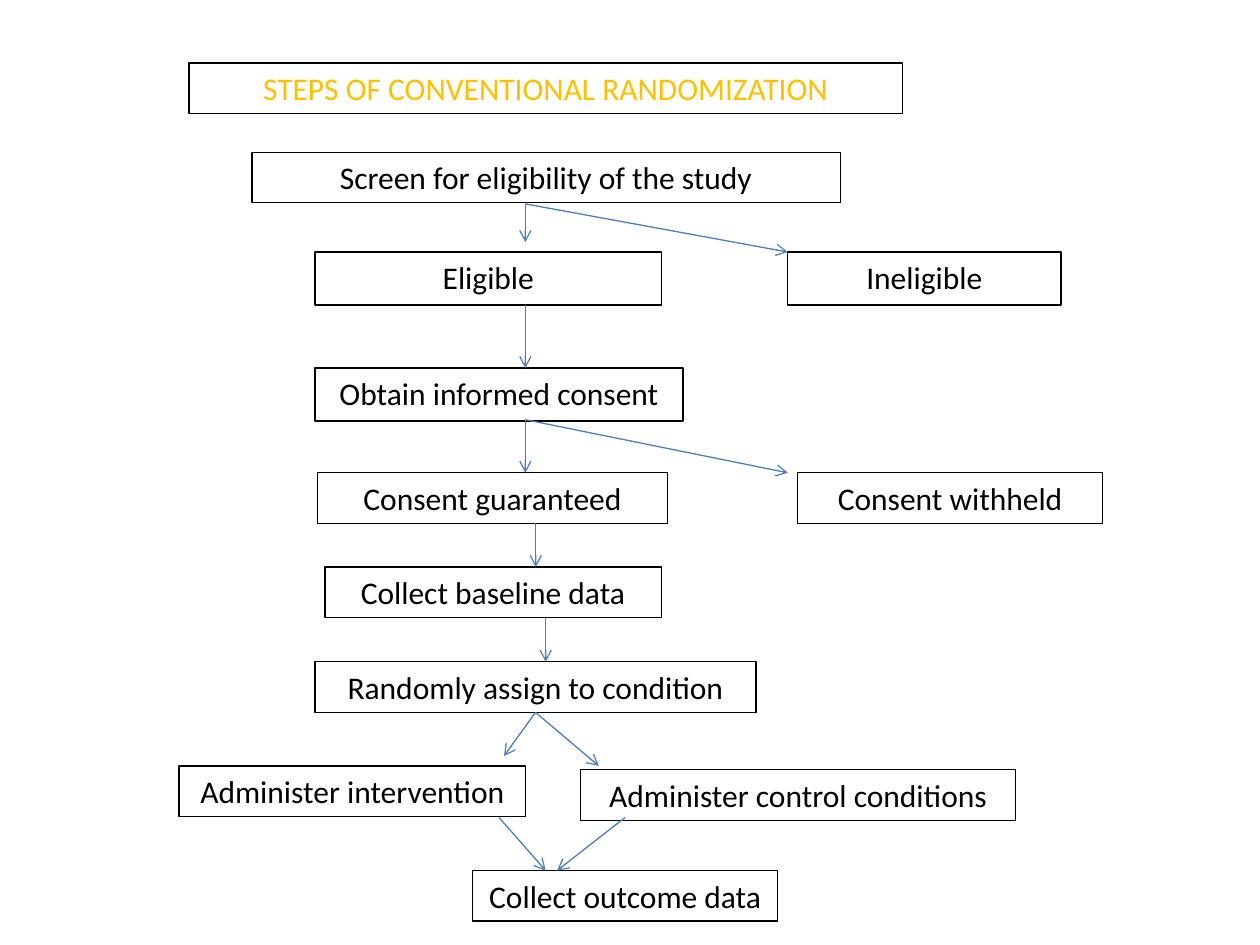
from pptx import Presentation
from pptx import util as u
from pptx.dml.color import RGBColor
from pptx.enum import shapes, text
from pptx.oxml.ns import qn
from lxml import etree

BLACK, GOLD, BLUE = "000000", "FFC000", "4B7EBC"
LOW, TALL = 1.02, 1.07
BOTTOM = 2

# label: left, top, width, height in cm
STEPS = {
    "Screen for eligibility of the study": (5.08, 3.07, 11.86, LOW),
    "Eligible": (6.35, 5.08, 6.99, TALL),
    "Ineligible": (15.88, 5.08, 5.51, TALL),
    "Obtain informed consent": (6.35, 7.42, 7.42, TALL),
    "Consent guaranteed": (6.4, 9.53, 7.06, LOW),
    "Consent withheld": (16.08, 9.53, 6.15, LOW),
    "Collect baseline data": (6.55, 11.43, 6.78, LOW),
    "Randomly assign to condition": (6.35, 13.34, 8.89, LOW),
    "Administer intervention": (3.61, 15.44, 6.99, LOW),
    "Administer control conditions": (11.71, 15.52, 8.76, LOW),
    "Collect outcome data": (9.53, 17.55, 6.15, LOW),
}

# start and end points in cm
ARROWS = [
    ((10.59, 4.11), (10.59, 4.88)),
    ((10.59, 6.15), (10.59, 7.42)),
    ((10.59, 8.46), (10.59, 9.53)),
    ((10.8, 10.54), (10.8, 11.43)),
    ((11, 12.45), (11, 13.34)),
    ((10.06, 16.48), (11, 17.55)),
    ((12.6, 16.48), (11.23, 17.55)),
    ((10.59, 4.11), (15.88, 5.08)),
    ((10.59, 8.46), (15.88, 9.53)),
]

# ends of the two arms that leave the random assignment
ARMS = [(10.16, 15.24), (12.07, 15.44)]


def color(code):
    return RGBColor.from_string(code)


def write(frame, words, size=18, font="Calibri", ink=BLACK):
    frame.word_wrap = True
    frame.auto_size = text.MSO_AUTO_SIZE.SHAPE_TO_FIT_TEXT
    para = frame.paragraphs[0]
    para.alignment = text.PP_ALIGN.CENTER
    run = para.add_run()
    run.text = words
    run.font.size = u.Pt(size)
    run.font.name = font
    run.font.color.rgb = color(ink)


def add_box(slide, words, place, **style):
    box = slide.shapes.add_textbox(*map(u.Cm, place))
    box.line.color.rgb = color(BLACK)
    box.line.width = u.Pt(0.75)
    write(box.text_frame, words, **style)
    return box


def add_arrow(slide, start, end):
    arrow = slide.shapes.add_connector(
        shapes.MSO_CONNECTOR.STRAIGHT, *map(u.Cm, start + end))
    arrow.line.color.rgb = color(BLUE)
    arrow.line.width = u.Pt(0.75)
    etree.SubElement(arrow.line._get_or_add_ln(), qn("a:tailEnd"), type="arrow")
    etree.SubElement(arrow._element.spPr, qn("a:effectLst"))
    return arrow


def main():
    deck = Presentation()
    deck.slide_width, deck.slide_height = u.Cm(25.4), u.Cm(19.05)
    slide = deck.slides.add_slide(deck.slide_layouts[6])

    add_box(slide, "STEPS OF CONVENTIONAL RANDOMIZATION",
            (3.81, 1.27, 14.38, LOW), ink=GOLD)
    boxes = {words: add_box(slide, words, place)
             for words, place in STEPS.items()}

    for start, end in ARROWS:
        add_arrow(slide, start, end)
    for end in ARMS:
        arm = add_arrow(slide, (10.8, 14.36), end)
        arm.begin_connect(boxes["Randomly assign to condition"], BOTTOM)

    deck.save("out.pptx")


if __name__ == "__main__":
    main()
